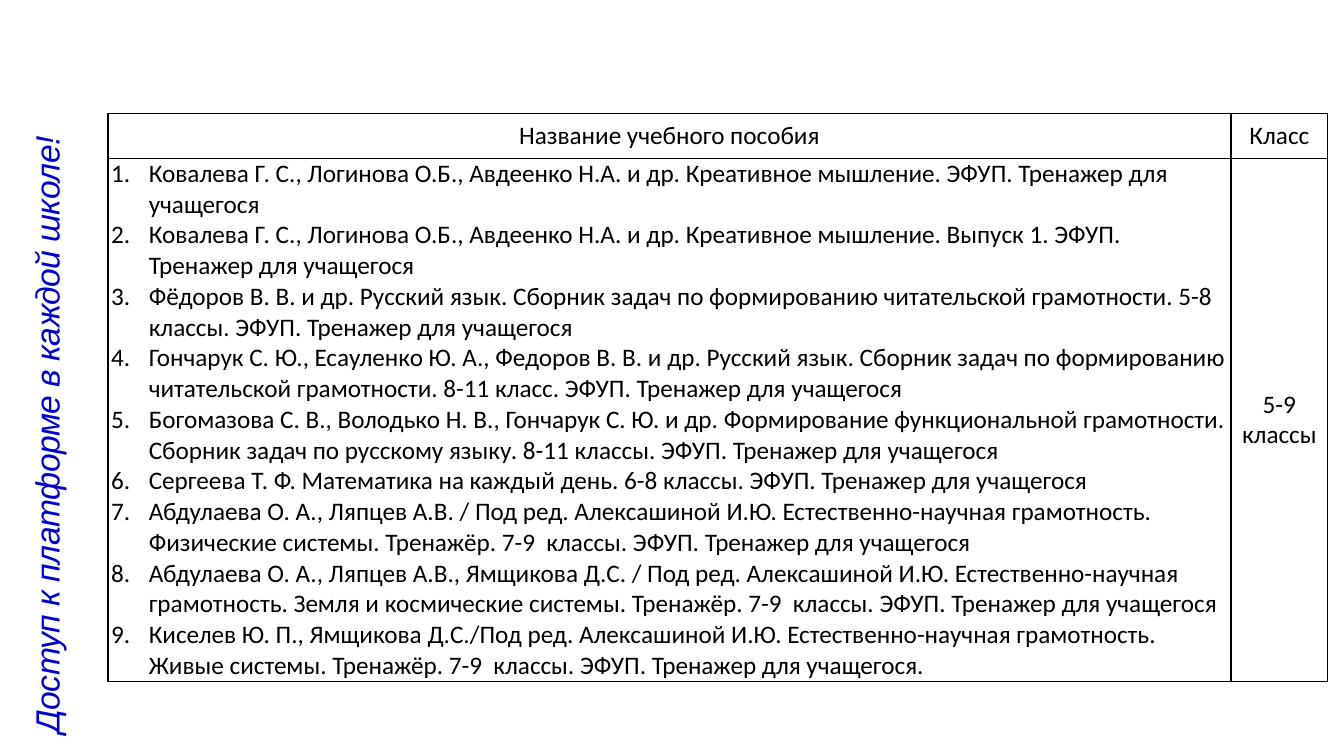
from dataclasses import dataclass

from lxml import etree
from pptx import Presentation
from pptx import util as u
from pptx.dml.color import RGBColor
from pptx.enum import text
from pptx.oxml import ns


@dataclass(frozen=True)
class Theme:
    ink: str = "000000"
    accent: str = "0000CC"
    table_font: str = "Calibri"
    slogan_font: str = "Arial"
    table_size: int = 18
    slogan_size: int = 24
    border: int = 1


@dataclass(frozen=True)
class CellSpec:
    row: int
    col: int
    lines: list[str]
    numbered: bool = False


THEME = Theme()
COL_WIDTHS = [28.3, 2.44]
ROW_HEIGHTS = [1.12, 10.97]
INDENT = u.Cm(0.95)

BOOKS = [
    "Ковалева Г. С., Логинова О.Б., Авдеенко Н.А. и др. Креативное мышление. ЭФУП. "
    "Тренажер для учащегося",
    "Ковалева Г. С., Логинова О.Б., Авдеенко Н.А. и др. Креативное мышление. Выпуск 1. ЭФУП. "
    "Тренажер для учащегося",
    "Фёдоров В. В. и др. Русский язык. Сборник задач по формированию читательской грамотности. "
    "5-8 классы. ЭФУП. Тренажер для учащегося",
    "Гончарук С. Ю., Есауленко Ю. А., Федоров В. В. и др. Русский язык. Сборник задач по "
    "формированию читательской грамотности. 8-11 класс. ЭФУП. Тренажер для учащегося",
    "Богомазова С. В., Володько Н. В., Гончарук С. Ю. и др. Формирование функциональной "
    "грамотности. Сборник задач по русскому языку. 8-11 классы. ЭФУП. Тренажер для учащегося",
    "Сергеева Т. Ф. Математика на каждый день. 6-8 классы. ЭФУП. Тренажер для учащегося",
    "Абдулаева О. А., Ляпцев А.В. / Под ред. Алексашиной И.Ю. Естественно-научная грамотность. "
    "Физические системы. Тренажёр. 7-9  классы. ЭФУП. Тренажер для учащегося",
    "Абдулаева О. А., Ляпцев А.В., Ямщикова Д.С. / Под ред. Алексашиной И.Ю. Естественно-научная "
    "грамотность. Земля и космические системы. Тренажёр. 7-9  классы. ЭФУП. "
    "Тренажер для учащегося",
    "Киселев Ю. П., Ямщикова Д.С./Под ред. Алексашиной И.Ю. Естественно-научная грамотность. "
    "Живые системы. Тренажёр. 7-9  классы. ЭФУП. Тренажер для учащегося.",
]

CELLS = [
    CellSpec(0, 0, ["Название учебного пособия"]),
    CellSpec(0, 1, ["Класс"]),
    CellSpec(1, 0, BOOKS, numbered=True),
    CellSpec(1, 1, ["5-9 классы"]),
]


def add_run(p, words: str, font: str, size: int, color: str):
    r = p.add_run()
    r.text = words
    r.font.name = font
    r.font.size = u.Pt(size)
    r.font.color.rgb = RGBColor.from_string(color)
    return r


def number_paragraph(p) -> None:
    """Give the paragraph a hanging indent and an automatic number."""
    pPr = p._p.get_or_add_pPr()
    pPr.set("marL", str(INDENT))
    pPr.set("indent", str(-INDENT))
    etree.SubElement(pPr, ns.qn("a:buFont"), typeface="+mj-lt")
    etree.SubElement(pPr, ns.qn("a:buAutoNum"), type="arabicPeriod")


def outline_cell(cell) -> None:
    tcPr = cell._tc.get_or_add_tcPr()
    for i, side in enumerate(("lnL", "lnR", "lnT", "lnB")):
        ln = etree.Element(ns.qn(f"a:{side}"), w=str(u.Pt(THEME.border)))
        fill = etree.SubElement(ln, ns.qn("a:solidFill"))
        etree.SubElement(fill, ns.qn("a:srgbClr"), val=THEME.ink)
        tcPr.insert(i, ln)


def fill_cell(cell, spec: CellSpec) -> None:
    cell.fill.background()
    outline_cell(cell)
    cell.margin_left = cell.margin_right = u.Cm(0.08)
    cell.margin_top = cell.margin_bottom = 0
    cell.vertical_anchor = text.MSO_ANCHOR.MIDDLE
    tf = cell.text_frame
    for i, line in enumerate(spec.lines):
        p = tf.add_paragraph() if i else tf.paragraphs[0]
        if spec.numbered:
            number_paragraph(p)
        else:
            p.alignment = text.PP_ALIGN.CENTER
        add_run(p, line, THEME.table_font, THEME.table_size, THEME.ink)


def add_book_table(s) -> None:
    tbl = s.shapes.add_table(
        len(ROW_HEIGHTS), len(COL_WIDTHS), u.Cm(2.72), u.Cm(2.87),
        u.Cm(sum(COL_WIDTHS)), u.Cm(sum(ROW_HEIGHTS)),
    ).table
    tbl.first_row = tbl.horz_banding = False
    for column, width in zip(tbl.columns, COL_WIDTHS):
        column.width = u.Cm(width)
    for row, height in zip(tbl.rows, ROW_HEIGHTS):
        row.height = u.Cm(height)
    for spec in CELLS:
        fill_cell(tbl.cell(spec.row, spec.col), spec)


def add_slogan(s) -> None:
    """Add the slogan that reads upwards along the left edge."""
    sp = s.shapes.add_textbox(u.Cm(0.53), u.Cm(2.87), u.Cm(1.55), u.Cm(16.18))
    tf = sp.text_frame
    tf.word_wrap = True
    tf.auto_size = text.MSO_AUTO_SIZE.SHAPE_TO_FIT_TEXT
    tf._txBody.bodyPr.set("vert", "vert270")
    p = tf.paragraphs[0]
    p.alignment = text.PP_ALIGN.CENTER
    r = add_run(p, "Доступ к платформе в каждой школе!",
                THEME.slogan_font, THEME.slogan_size, THEME.accent)
    r.font.italic = True
    r._r.get_or_add_rPr().set("spc", "-40")


def main() -> None:
    prs = Presentation()
    prs.slide_width, prs.slide_height = u.Cm(33.87), u.Cm(19.05)
    s = prs.slides.add_slide(prs.slide_layouts[6])
    add_book_table(s)
    add_slogan(s)
    prs.save("out.pptx")


if __name__ == "__main__":
    main()
